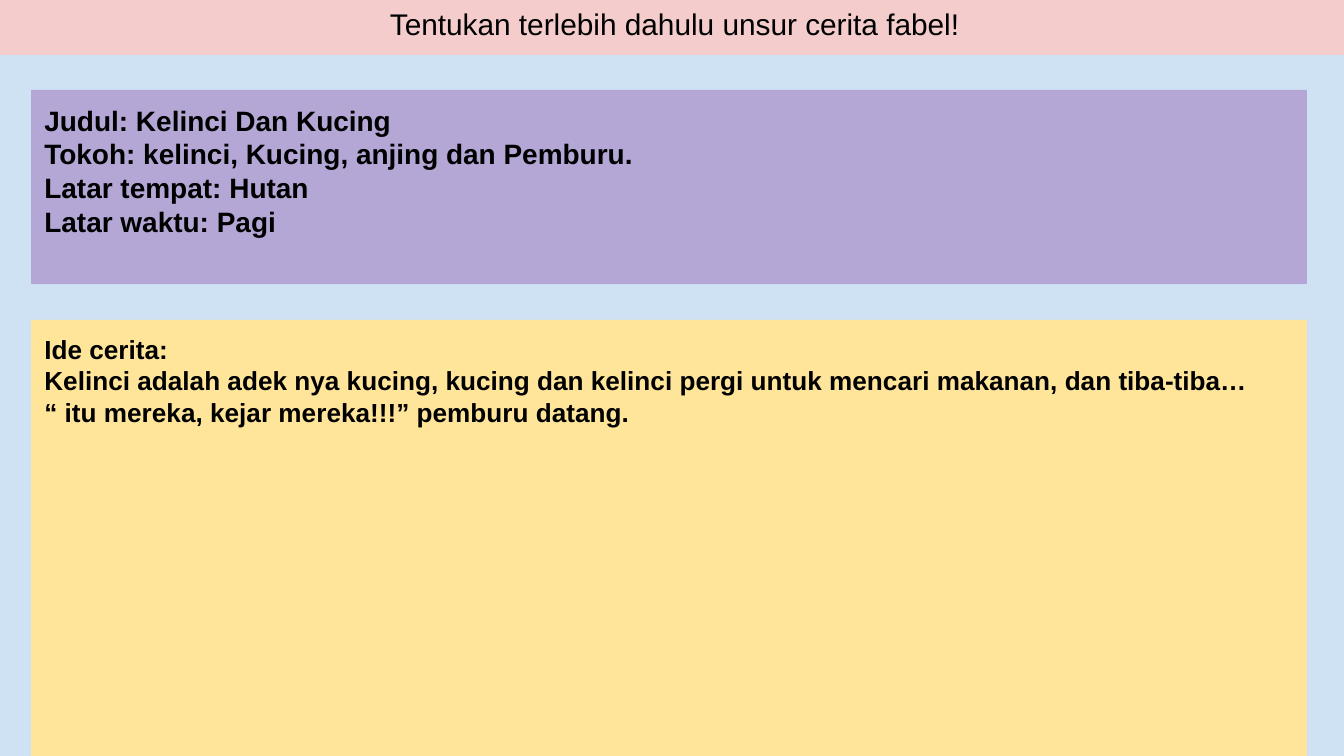
from pptx import Presentation
from pptx.dml.color import RGBColor
from pptx.enum.shapes import MSO_SHAPE
from pptx.enum.text import MSO_ANCHOR, PP_ALIGN
from pptx.util import Pt

RECTANGLE = MSO_SHAPE.RECTANGLE
TOP = MSO_ANCHOR.TOP
LEFT, CENTER = PP_ALIGN.LEFT, PP_ALIGN.CENTER


def color(hex_code):
    return RGBColor.from_string(hex_code)


class FableSlide:
    font = "Arial"
    ink = "000000"
    inset = 7.2

    def __init__(self, slide):
        self.slide = slide

    def panel(self, left, top, width, height, fill):
        panel = self.slide.shapes.add_shape(
            RECTANGLE, Pt(left), Pt(top), Pt(width), Pt(height))
        panel.shadow.inherit = False
        panel.fill.solid()
        panel.fill.fore_color.rgb = color(fill)
        panel.line.fill.background()
        return panel

    def add_lines(self, panel, lines, size, bold=True, align=LEFT):
        frame = panel.text_frame
        frame.word_wrap = True
        frame.vertical_anchor = TOP
        frame.margin_left = frame.margin_right = Pt(self.inset)
        frame.margin_top = frame.margin_bottom = Pt(self.inset)
        frame.text = "\n".join(lines)
        for paragraph in frame.paragraphs:
            paragraph.alignment = align
            for run in paragraph.runs:
                run.font.name = self.font
                run.font.size = Pt(size)
                run.font.bold = bold
                run.font.color.rgb = color(self.ink)


def main():
    deck = Presentation()
    deck.slide_width, deck.slide_height = Pt(720), Pt(405)
    fable = FableSlide(deck.slides.add_slide(deck.slide_layouts[6]))

    # Backdrop and heading band share their left, top and width
    bleed_left, bleed_top, bleed_width = -6.5, -4.3, 736
    fable.panel(bleed_left, bleed_top, bleed_width, 422, "CFE2F3")
    heading = fable.panel(bleed_left, bleed_top, bleed_width, 33.8, "F4CCCC")
    fable.add_lines(heading, ["Tentukan terlebih dahulu unsur cerita fabel!"],
                    16, bold=False, align=CENTER)

    # Story elements
    card_left, card_width = 16.7, 683.5
    elements = fable.panel(card_left, 48.2, card_width, 104, "B4A7D6")
    fable.add_lines(elements, [
        "Judul: Kelinci Dan Kucing",
        "Tokoh: kelinci, Kucing, anjing dan Pemburu.",
        "Latar tempat: Hutan",
        "Latar waktu: Pagi",
    ], 15)

    # Story idea
    idea = fable.panel(card_left, 171.4, card_width, 252, "FFE599")
    fable.add_lines(idea, [
        "Ide cerita:",
        "Kelinci adalah adek nya kucing, kucing dan kelinci pergi "
        "untuk mencari makanan, dan tiba-tiba…",
        "“ itu mereka, kejar mereka!!!” pemburu datang.",
    ], 14)

    deck.save("out.pptx")


if __name__ == "__main__":
    main()
